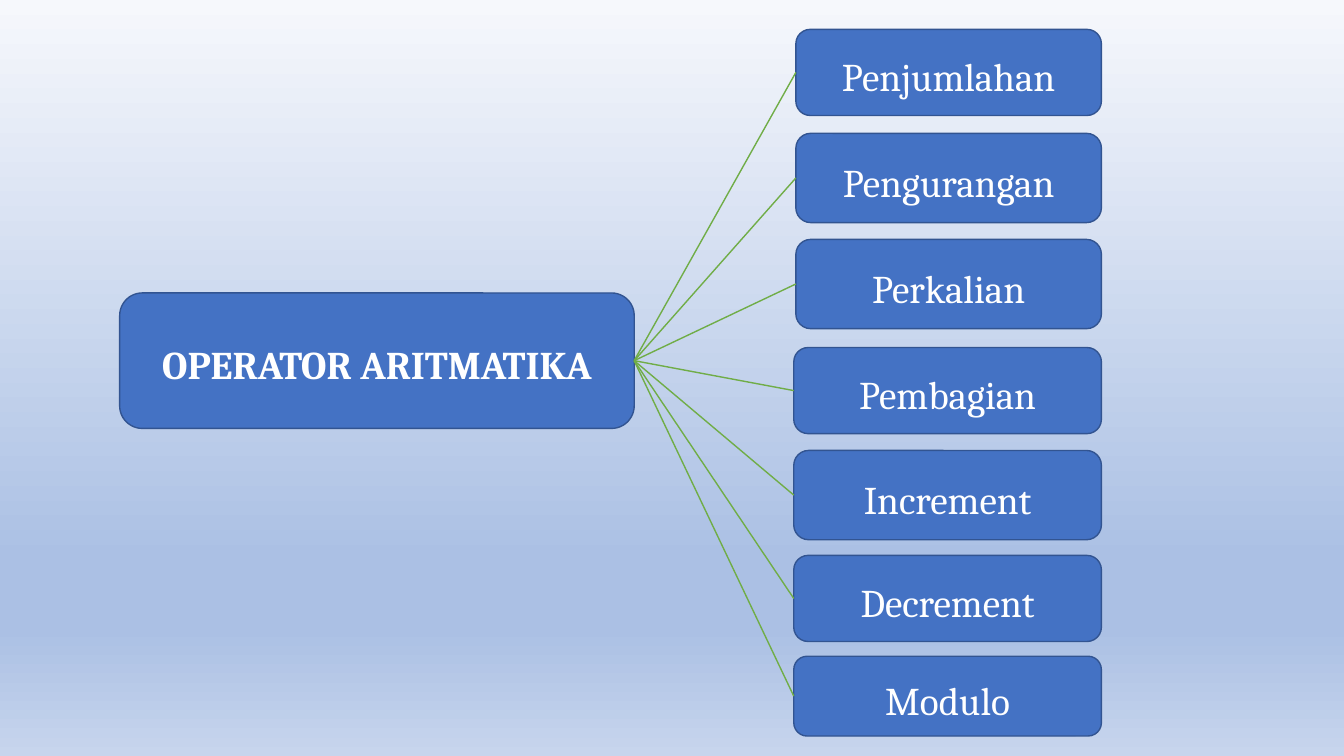
from copy import deepcopy

from lxml import etree
from pptx import Presentation
from pptx.dml.color import RGBColor
from pptx.enum.shapes import MSO_CONNECTOR, MSO_SHAPE
from pptx.enum.text import MSO_ANCHOR, PP_ALIGN
from pptx.oxml.ns import qn
from pptx.util import Pt

ROUND = MSO_SHAPE.ROUNDED_RECTANGLE
STRAIGHT = MSO_CONNECTOR.STRAIGHT
MIDDLE = MSO_ANCHOR.MIDDLE
CENTER = PP_ALIGN.CENTER
LEFT, RIGHT = 1, 3

SCALE = 9525
SIZE = (1280, 720)
ROOT = (114, 279, 490, 129)
LIST = (756, 28, 293, 673)
STOPS = [(0, "F6F8FC"), (0.74, "ABC0E4"), (0.83, "ABC0E4"), (1, "C7D5ED")]
ITEMS = [
    ("Penjumlahan", 2, 0, 82),
    ("Pengurangan", 2, 99, 85),
    ("Perkalian", 2, 200, 85),
    ("Pembagian", 0, 303, 82),
    ("Increment", 0, 401, 85),
    ("Decrement", 0, 501, 82),
    ("Modulo", 0, 597, 76),
]


def px(n):
    return n * SCALE


def color(code):
    return RGBColor.from_string(code)


def paint(slide):
    fill = slide.background.fill
    fill.gradient()
    fill.gradient_angle = 270
    stops = slide.element.find(".//" + qn("a:gsLst"))
    while len(stops) < len(STOPS):
        stops.append(deepcopy(stops[0]))
    for stop, (place, code) in zip(fill.gradient_stops, STOPS):
        stop.position = place
        stop.color.rgb = color(code)


def node(slide, box, text, bold=False):
    shape = slide.shapes.add_shape(ROUND, *map(px, box))
    shape.shadow.inherit = False
    shape.fill.solid()
    shape.fill.fore_color.rgb = color("4472C4")
    shape.line.color.rgb = color("325491")
    shape.line.width = Pt(1)
    frame = shape.text_frame
    frame.word_wrap = True
    frame.vertical_anchor = MIDDLE
    para = frame.paragraphs[0]
    para.text = text
    para.alignment = CENTER
    para.line_spacing = 1.15
    font = para.font
    font.name = "Cambria"
    font.size = Pt(28)
    font.bold = bold
    font.color.rgb = color("FFFFFF")
    return shape


def link(slide, start, end):
    line = slide.shapes.add_connector(STRAIGHT, 0, 0, 0, 0)
    line.begin_connect(start, RIGHT)
    line.end_connect(end, LEFT)
    line.line.color.rgb = color("70AD47")
    line.line.width = Pt(1)
    etree.SubElement(line.element.spPr, qn("a:effectLst"))


def branch(slide, box, root):
    left, top, width, _ = box
    for text, inset, drop, height in ITEMS:
        place = (left + inset, top + drop, width - inset, height)
        link(slide, root, node(slide, place, text))


def main():
    deck = Presentation()
    deck.slide_width, deck.slide_height = map(px, SIZE)
    slide = deck.slides.add_slide(deck.slide_layouts[6])
    paint(slide)
    root = node(slide, ROOT, "OPERATOR ARITMATIKA", True)
    branch(slide, LIST, root)
    deck.save("out.pptx")


if __name__ == "__main__":
    main()
